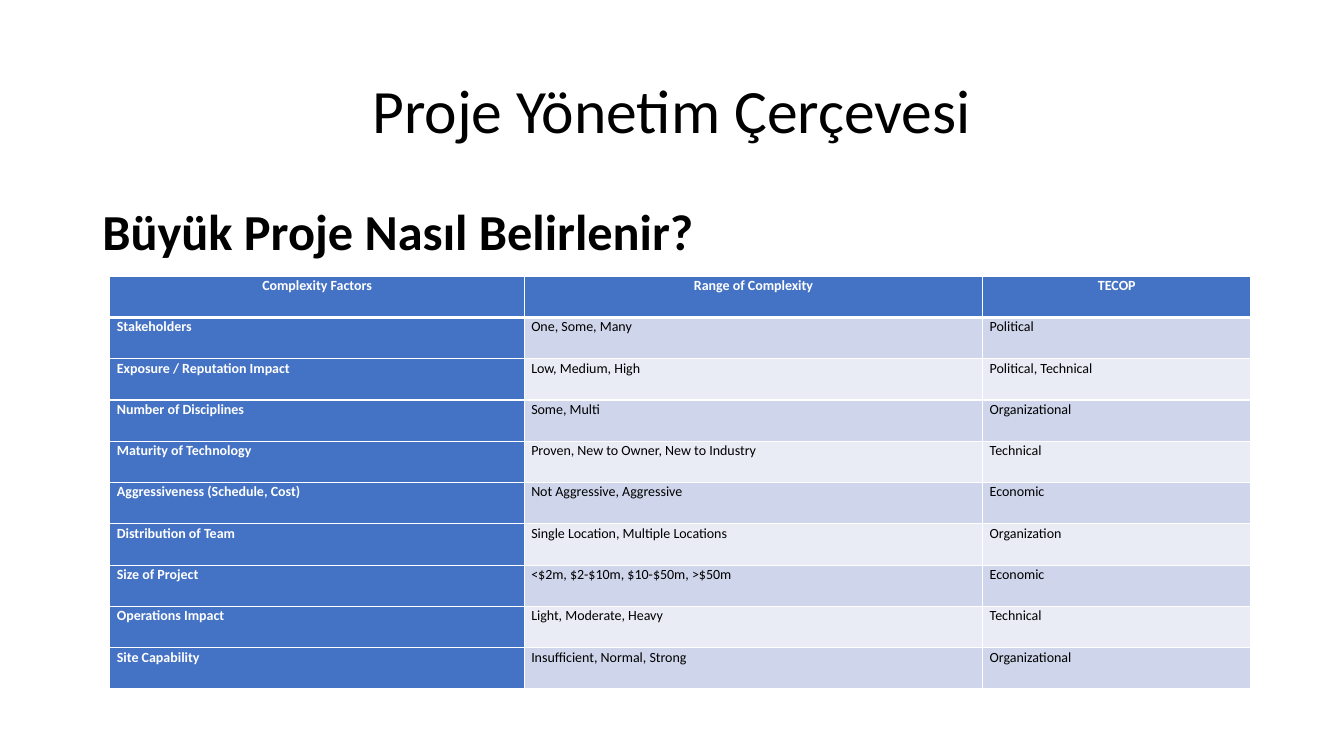
from lxml import etree
from pptx import Presentation
from pptx.dml.color import RGBColor
from pptx.enum.text import MSO_ANCHOR, PP_ALIGN
from pptx.oxml.ns import qn
from pptx.util import Pt

LEFT, CENTER = PP_ALIGN.LEFT, PP_ALIGN.CENTER
TOP, MIDDLE = MSO_ANCHOR.TOP, MSO_ANCHOR.MIDDLE

FONT = "Calibri"
COLORS = {
    "text": "000000",
    "white": "FFFFFF",
    "header": "4472C4",
    "band_dark": "CFD5EA",
    "band_light": "E9EBF5",
}

TABLE_LEFT, TABLE_TOP = 78.5, 197.3
COLUMN_WIDTHS = [296, 327.5, 191.5]
ROW_HEIGHT = 29.5
ROWS = [
    ("Complexity Factors", "Range of Complexity", "TECOP"),
    ("Stakeholders", "One, Some, Many", "Political"),
    ("Exposure / Reputation Impact", "Low, Medium, High", "Political, Technical"),
    ("Number of Disciplines", "Some, Multi", "Organizational"),
    ("Maturity of Technology", "Proven, New to Owner, New to Industry", "Technical"),
    ("Aggressiveness (Schedule, Cost)", "Not Aggressive, Aggressive", "Economic"),
    ("Distribution of Team", "Single Location, Multiple Locations", "Organization"),
    ("Size of Project", "<$2m, $2-$10m, $10-$50m, >$50m", "Economic"),
    ("Operations Impact", "Light, Moderate, Heavy", "Technical"),
    ("Site Capability", "Insufficient, Normal, Strong", "Organizational"),
]


def rgb(name):
    return RGBColor.from_string(COLORS[name])


def set_text(tf, text, size, color="text", bold=False, align=LEFT,
             line=0.9, before=0, after=0):
    p = tf.paragraphs[0]
    p.alignment = align
    p.line_spacing = line
    p.space_before, p.space_after = Pt(before), Pt(after)
    r = p.add_run()
    r.text = text
    r.font.name = FONT
    r.font.size = Pt(size)
    r.font.bold = bold
    r.font.color.rgb = rgb(color)


def set_borders(cell, **widths):
    tc_pr = cell._tc.get_or_add_tcPr()
    for side in ("L", "R", "T", "B"):
        ln = etree.SubElement(tc_pr, qn(f"a:ln{side}"),
                              w=str(Pt(widths.get(side, 1))))
        fill = etree.SubElement(ln, qn("a:solidFill"))
        etree.SubElement(fill, qn("a:srgbClr"), val=COLORS["white"])


def add_title(s, text):
    sp = s.shapes.title
    sp.left, sp.top, sp.width, sp.height = Pt(66), Pt(28.8), Pt(828), Pt(104.4)
    sp.text_frame.vertical_anchor = MIDDLE
    set_text(sp.text_frame, text, 44, align=CENTER)


def add_heading(s, text):
    sp = s.shapes.add_textbox(Pt(66), Pt(144), Pt(745.2), Pt(342.7))
    tf = sp.text_frame
    tf.word_wrap = True
    tf.vertical_anchor = TOP
    set_text(tf, text, 36, bold=True, before=10)


def format_cell(cell, text, row, col):
    is_label = row == 0 or col == 0
    cell.margin_left = cell.margin_right = Pt(5)
    cell.margin_top = cell.margin_bottom = 0
    cell.vertical_anchor = TOP
    # A thick rule separates the header from the body
    set_borders(cell, T=3 if row == 1 else 1, B=3 if row == 0 else 1)
    band = "band_dark" if row % 2 else "band_light"
    cell.fill.solid()
    cell.fill.fore_color.rgb = rgb("header" if is_label else band)
    set_text(cell.text_frame, text, 10, color="white" if is_label else "text",
             bold=is_label, align=CENTER if row == 0 else LEFT,
             line=1.07, before=2, after=2)


def add_complexity_table(s):
    frame = s.shapes.add_table(len(ROWS), len(COLUMN_WIDTHS),
                               Pt(TABLE_LEFT), Pt(TABLE_TOP),
                               Pt(sum(COLUMN_WIDTHS)), Pt(ROW_HEIGHT * len(ROWS)))
    table = frame.table
    table.first_col = True
    for column, width in zip(table.columns, COLUMN_WIDTHS):
        column.width = Pt(width)
    for i, texts in enumerate(ROWS):
        table.rows[i].height = Pt(ROW_HEIGHT)
        for j, text in enumerate(texts):
            format_cell(table.cell(i, j), text, i, j)


def main():
    prs = Presentation()
    prs.slide_width, prs.slide_height = Pt(960), Pt(540)
    s = prs.slides.add_slide(prs.slide_layouts.get_by_name("Title Only"))

    # Title and question
    add_title(s, "Proje Yönetim Çerçevesi")
    add_heading(s, "Büyük Proje Nasıl Belirlenir?")

    # Complexity factors
    add_complexity_table(s)

    prs.save("out.pptx")


if __name__ == "__main__":
    main()
